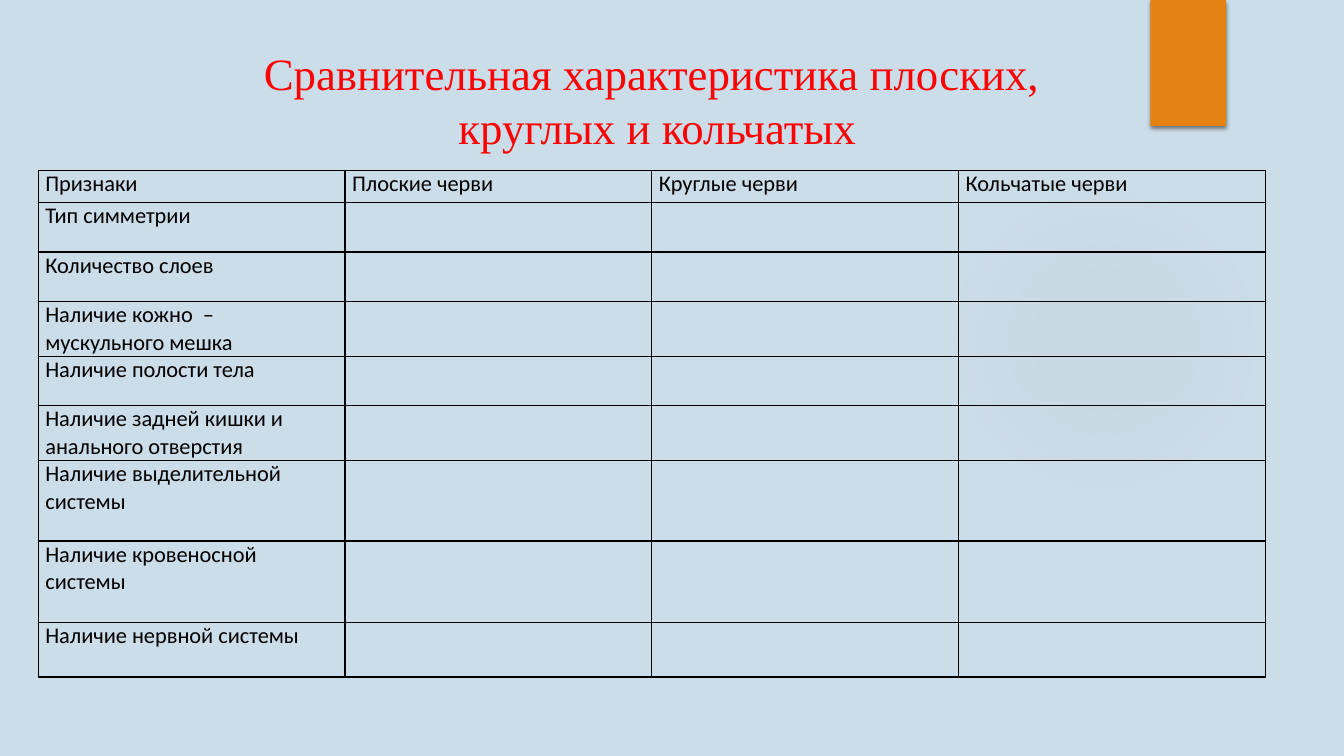
import pptx
import pptx.dml.color
import pptx.enum.shapes
import pptx.enum.text
import pptx.oxml
import pptx.oxml.ns
import pptx.util

# Content
TITLE = ["Сравнительная характеристика плоских,", " круглых и кольчатых"]
WORM_TYPES = ["Признаки", "Плоские черви", "Круглые черви", "Кольчатые черви"]
FEATURES = [  # feature, row height in inches
    ("Тип симметрии", 0.49),
    ("Количество слоев", 0.49),
    ("Наличие кожно  – мускульного мешка", 0.54),
    ("Наличие полости тела", 0.49),
    ("Наличие задней кишки и анального отверстия", 0.54),
    ("Наличие выделительной системы", 0.8),
    ("Наличие кровеносной системы", 0.81),
    ("Наличие нервной системы", 0.54),
]
HEADER_HEIGHT = 0.32
COLUMN_WIDTH = 3.0425
GLOW_STOPS = [(0, 7), (36, 6), (69, 0)]  # position and opacity, percent

SHAPES = pptx.enum.shapes.MSO_SHAPE
inches = pptx.util.Inches


def color(hex_code):
    return pptx.dml.color.RGBColor.from_string(hex_code)


def xml(markup):
    namespace = pptx.oxml.ns.nsdecls("a")
    return pptx.oxml.parse_xml(markup.replace(">", f" {namespace}>", 1))


def style(paragraph, size, font_name, hex_code):
    for run in paragraph.runs:
        run.font.size = pptx.util.Pt(size)
        run.font.name = font_name
        run.font.color.rgb = color(hex_code)


def add_decor(slide, kind, box, hex_code):
    decor = slide.shapes.add_shape(kind, *map(inches, box))
    decor.shadow.inherit = False
    decor.line.fill.background()
    decor.fill.solid()
    decor.fill.fore_color.rgb = color(hex_code)
    return decor


def add_borders(cell):
    properties = cell._tc.get_or_add_tcPr()
    for index, side in enumerate(("lnL", "lnR", "lnT", "lnB")):
        properties.insert(index, xml(
            f'<a:{side} w="12700"><a:solidFill><a:srgbClr val="000000"/>'
            f'</a:solidFill></a:{side}>'))


def main():
    deck = pptx.Presentation()
    deck.slide_width, deck.slide_height = inches(13.33), inches(7.5)
    slide = deck.slides.add_slide(deck.slide_layouts[6])
    slide.background.fill.solid()
    slide.background.fill.fore_color.rgb = color("CCDDEA")

    # Soft round glow
    glow = add_decor(slide, SHAPES.OVAL, (9.41, 1.83, 3.08, 3.08), "A2AF92")
    stops = "".join(
        f'<a:gs pos="{position * 1000}"><a:srgbClr val="A2AF92">'
        f'<a:alpha val="{opacity * 1000}"/></a:srgbClr></a:gs>'
        for position, opacity in GLOW_STOPS)
    solid = glow._element.spPr.find(pptx.oxml.ns.qn("a:solidFill"))
    solid.getparent().replace(solid, xml(
        f'<a:gradFill><a:gsLst>{stops}</a:gsLst><a:path path="circle">'
        '<a:fillToRect l="50000" t="50000" r="50000" b="50000"/>'
        '</a:path></a:gradFill>'))

    # Orange bookmark with a shadow
    bookmark = add_decor(slide, SHAPES.RECTANGLE, (11.41, 0, 0.75, 1.25), "E48312")
    effects = bookmark._element.spPr.find(pptx.oxml.ns.qn("a:effectLst"))
    effects.append(xml(
        '<a:outerShdw blurRad="38100" dist="25400" dir="5400000" rotWithShape="0">'
        '<a:srgbClr val="000000"><a:alpha val="45000"/></a:srgbClr></a:outerShdw>'))

    # Comparison table
    rows = [WORM_TYPES] + [[feature, "", "", ""] for feature, _ in FEATURES]
    heights = [HEADER_HEIGHT] + [height for _, height in FEATURES]
    comparison = slide.shapes.add_table(
        len(rows), len(WORM_TYPES), inches(0.38), inches(1.69),
        inches(COLUMN_WIDTH * len(WORM_TYPES)), inches(sum(heights))).table
    comparison.first_row = comparison.horz_banding = False
    for column in comparison.columns:
        column.width = inches(COLUMN_WIDTH)
    for row_index, (texts, height) in enumerate(zip(rows, heights)):
        comparison.rows[row_index].height = inches(height)
        for column_index, text in enumerate(texts):
            cell = comparison.cell(row_index, column_index)
            cell.margin_left = cell.margin_right = inches(0.07)
            cell.margin_top = cell.margin_bottom = 0
            cell.fill.background()
            add_borders(cell)
            if text:
                cell.text_frame.text = text
                style(cell.text_frame.paragraphs[0], 16, "Calibri", "000000")

    # Title
    title = slide.shapes.add_textbox(*map(inches, (2.48, 0.4, 7.97, 1.18))).text_frame
    title.word_wrap = False
    title.auto_size = pptx.enum.text.MSO_AUTO_SIZE.SHAPE_TO_FIT_TEXT
    title.vertical_anchor = pptx.enum.text.MSO_ANCHOR.MIDDLE
    title.text = "\n".join(TITLE)
    for paragraph in title.paragraphs:
        paragraph.alignment = pptx.enum.text.PP_ALIGN.CENTER
        style(paragraph, 32, "Times New Roman", "FF0000")

    deck.save("out.pptx")


if __name__ == "__main__":
    main()
